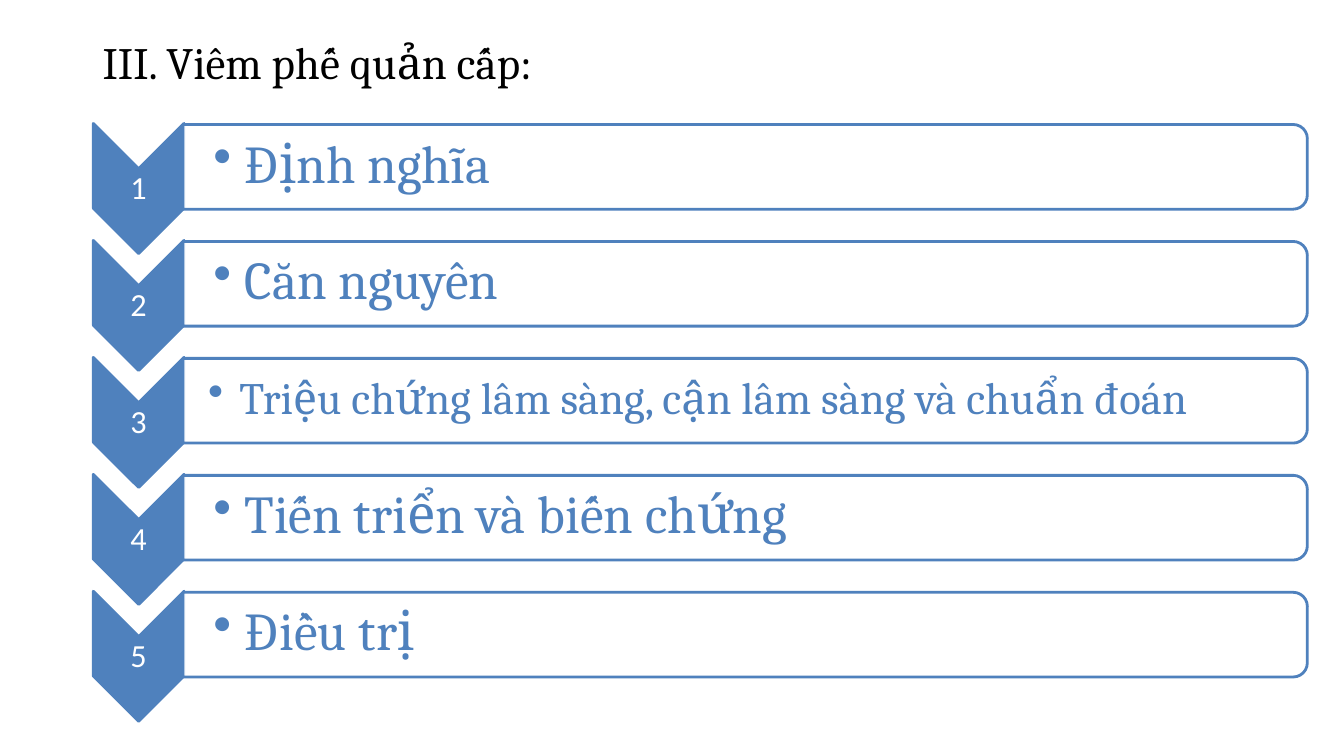
from lxml.etree import SubElement
from pptx import Presentation
from pptx.dml.color import RGBColor
from pptx.enum.shapes import MSO_SHAPE as Preset
from pptx.enum.text import MSO_ANCHOR as Anchor, PP_ALIGN as Align
from pptx.oxml.ns import qn
from pptx.util import Inches, Pt

BLUE, WHITE, BLACK = "4F81BD", "FFFFFF", "000000"
ROW_STEP = 15.47  # percent of the slide's height


def color(hex_string):
    return RGBColor.from_string(hex_string)


class Board:
    """Draws on one slide; every box is (left, top, width, height) in percent of it."""

    def __init__(self, deck):
        self.width, self.height = deck.slide_width, deck.slide_height
        self.shapes = deck.slides.add_slide(deck.slide_layouts[6]).shapes

    def place(self, box):
        left, top, width, height = box
        return (int(left * self.width / 100), int(top * self.height / 100),
                int(width * self.width / 100), int(height * self.height / 100))

    def turned(self, preset, box, fill, alpha=None):
        """Adds a preset turned by 90 degrees that covers the given box."""
        left, top, width, height = self.place(box)
        shift = (width - height) // 2
        shape = self.shapes.add_shape(preset, left + shift, top - shift, height, width)
        shape.rotation = 90
        shape.shadow.inherit = False
        shape.fill.solid()
        shape.fill.fore_color.rgb = color(fill)
        shape.line.color.rgb = color(BLUE)
        shape.line.width = Pt(2)
        if alpha:
            srgb = shape.fill._xPr.find(".//" + qn("a:srgbClr"))
            SubElement(srgb, qn("a:alpha"), val=str(alpha * 1000))

    def text(self, box, words, font, size, ink, insets=(0.1, 0.05),
             anchor=Anchor.MIDDLE, align=Align.LEFT, spacing=0.9, bullet=False):
        frame = self.shapes.add_textbox(*self.place(box)).text_frame
        frame.word_wrap = True
        frame.vertical_anchor = anchor
        first, rest = insets
        frame.margin_left = Inches(first)
        frame.margin_right = Inches(max(rest, 0.1) if not bullet and first == 0.1 else rest)
        frame.margin_top = frame.margin_bottom = Inches(rest)
        paragraph = frame.paragraphs[0]
        paragraph.text = words
        paragraph.alignment = align
        paragraph.line_spacing = spacing
        if bullet:
            properties = paragraph._p.get_or_add_pPr()
            properties.set("marL", str(Inches(0.31)))
            properties.set("indent", str(-Inches(0.31)))
            SubElement(properties, qn("a:buChar"), char="•")
        paragraph.font.name = font
        paragraph.font.size = Pt(size)
        paragraph.font.color.rgb = color(ink)


def main():
    deck = Presentation()
    deck.slide_width, deck.slide_height = Inches(13.33), Inches(7.5)
    board = Board(deck)

    # Heading
    board.text((6.9, 3.87, 49.6, 8.53), "III. Viêm phế quản cấp:", "Cambria", 32, BLACK,
               anchor=Anchor.TOP, spacing=1.0)

    # Numbered chevrons with their topics: words, size, left inset, other insets
    topics = [
        ("Định nghĩa", 38, 0.3, 0.03),
        ("Căn nguyên", 38, 0.3, 0.03),
        ("Triệu chứng lâm sàng, cận lâm sàng và chuẩn đoán", 32, 0.25, 0.02),
        ("Tiến triển và biến chứng", 38, 0.3, 0.03),
        ("Điều trị", 38, 0.3, 0.03),
    ]
    for index, (topic, size, *insets) in enumerate(topics):
        drop = index * ROW_STEP
        board.turned(Preset.CHEVRON, (6.94, 16.33 + drop, 6.75, 17.2), BLUE)
        board.text((6.94, 22.4 + drop, 6.75, 5.2), str(index + 1), "Calibri", 23, WHITE,
                   insets=(0.02, 0.02), align=Align.CENTER)
        board.turned(Preset.ROUND_2_SAME_RECTANGLE, (13.62, 16.47 + drop, 83.65, 11.2),
                     WHITE, alpha=90)
        board.text((13.62, 16.93 + drop, 83.35, 10), topic, "Cambria", size, BLUE,
                   insets=insets, bullet=True)

    deck.save("out.pptx")


if __name__ == "__main__":
    main()
